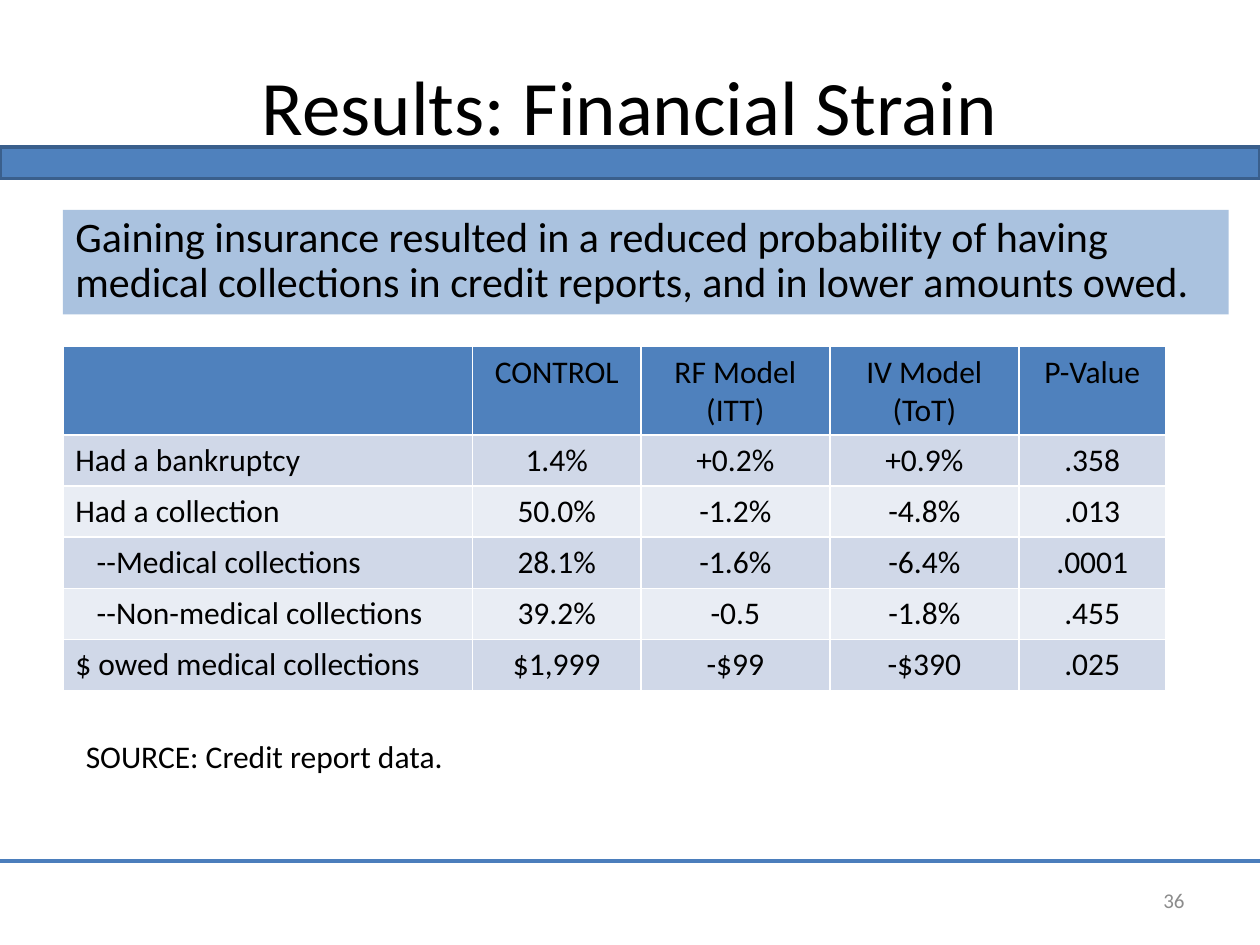
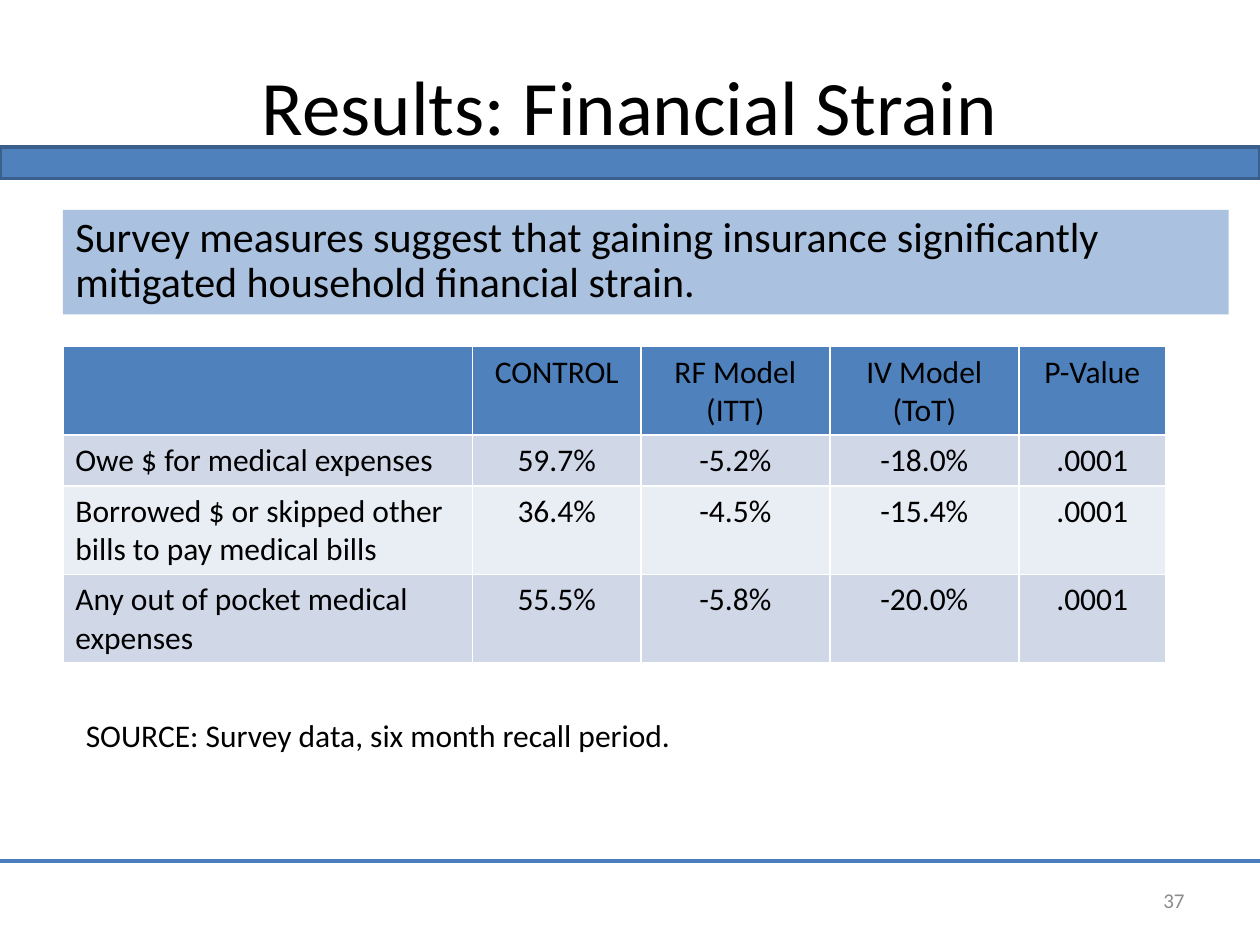
from lxml.etree import SubElement
from pptx import Presentation
from pptx.dml.color import RGBColor
from pptx.enum.shapes import MSO_CONNECTOR, MSO_SHAPE
from pptx.enum.text import MSO_ANCHOR as ANCHOR, PP_ALIGN as ALIGN
from pptx.oxml.ns import qn
from pptx.util import Cm, Pt

BLACK = RGBColor(0x00, 0x00, 0x00)
WHITE = RGBColor(0xFF, 0xFF, 0xFF)
GREY = RGBColor(0x8C, 0x8C, 0x8C)
BLUE = RGBColor(0x4F, 0x81, 0xBD)
BLUE_EDGE = RGBColor(0x3A, 0x5F, 0x8C)
BLUE_RULE = RGBColor(0x4B, 0x7E, 0xBC)
ROW_DARK = RGBColor(0xD0, 0xD8, 0xE8)
ROW_LIGHT = RGBColor(0xE9, 0xED, 0xF4)

WIDTH, HEIGHT = 25.4, 19.05
MARGIN = 1.27
COLUMNS = [8.26, 3.39, 3.81, 3.81, 2.96]
ONE_LINE, TWO_LINES = 1.03, 1.78
CELL_MARGIN, SUB_ITEM_MARGIN = 0.25, 0.68
HEADER = ["", "CONTROL", "RF Model\n(ITT)", "IV Model\n(ToT)", "P-Value"]

SLIDES = [
    dict(
        number=36,
        finding="Gaining insurance resulted in a reduced probability of having "
                "medical collections in credit reports, and in lower amounts owed.",
        rows=[
            ["Had a bankruptcy", "1.4%", "+0.2%", "+0.9%", ".358"],
            ["Had a collection", "50.0%", "-1.2%", "-4.8%", ".013"],
            ["--Medical collections", "28.1%", "-1.6%", "-6.4%", ".0001"],
            ["--Non-medical collections", "39.2%", "-0.5", "-1.8%", ".455"],
            ["$ owed medical collections", "$1,999", "-$99", "-$390", ".025"],
        ],
        heights=[ONE_LINE] * 5,
        source="SOURCE: Credit report data.",
        source_top=14.82,
    ),
    dict(
        number=37,
        finding="Survey measures suggest that gaining insurance significantly "
                "mitigated household financial strain.",
        rows=[
            ["Owe $ for medical expenses", "59.7%", "-5.2%", "-18.0%", ".0001"],
            ["Borrowed $ or skipped other bills to pay medical bills",
             "36.4%", "-4.5%", "-15.4%", ".0001"],
            ["Any out of pocket medical expenses",
             "55.5%", "-5.8%", "-20.0%", ".0001"],
        ],
        heights=[ONE_LINE, TWO_LINES, TWO_LINES],
        source="SOURCE: Survey data, six month recall period.",
        source_top=14.4,
    ),
]


class Deck:
    """Holds the shared style and the current slide, and draws its elements."""

    def __init__(self, font="Calibri"):
        self.font = font
        self.prs = Presentation()
        self.prs.slide_width, self.prs.slide_height = Cm(WIDTH), Cm(HEIGHT)
        self.s = None

    def fill_text(self, tf, text, size, color=BLACK, align=ALIGN.LEFT, spacing=None):
        tf.word_wrap = True
        for i, line in enumerate(text.split("\n")):
            p = tf.add_paragraph() if i else tf.paragraphs[0]
            p.text = line
            p.alignment = align
            if spacing:
                p.line_spacing = spacing
            p.font.name, p.font.size = self.font, Pt(size)
            p.font.color.rgb = color

    def text(self, x, y, w, h, text, size, anchor=ANCHOR.TOP, **style):
        sp = self.s.shapes.add_textbox(Cm(x), Cm(y), Cm(w), Cm(h))
        sp.text_frame.vertical_anchor = anchor
        self.fill_text(sp.text_frame, text, size, **style)

    def box(self, x, y, w, h, fill, edge=None, opacity=None):
        sp = self.s.shapes.add_shape(MSO_SHAPE.RECTANGLE, Cm(x), Cm(y), Cm(w), Cm(h))
        sp.shadow.inherit = False
        sp.fill.solid()
        sp.fill.fore_color.rgb = fill
        if opacity:
            clr = sp._element.spPr.find(qn("a:solidFill"))[0]
            SubElement(clr, qn("a:alpha"), val=str(opacity * 1000))
        if edge:
            sp.line.color.rgb, sp.line.width = edge, Pt(2)
        else:
            sp.line.fill.background()
        return sp

    def rule(self, y):
        sp = self.s.shapes.add_connector(
            MSO_CONNECTOR.STRAIGHT, Cm(0), Cm(y), Cm(WIDTH), Cm(y))
        sp.line.color.rgb, sp.line.width = BLUE_RULE, Pt(2.5)
        SubElement(sp._element.spPr, qn("a:effectLst"))

    def slide(self, title, number):
        self.s = self.prs.slides.add_slide(self.prs.slide_layouts[6])
        self.text(1.9, 1.06, 21.6, 1.95, title, 44, align=ALIGN.CENTER)
        self.box(0, 2.96, WIDTH, 0.64, BLUE, edge=BLUE_EDGE)
        self.rule(17.36)
        self.text(18.2, 17.65, 5.93, 1.01, str(number), 12, anchor=ANCHOR.MIDDLE,
                  color=GREY, align=ALIGN.RIGHT)

    def finding(self, text):
        sp = self.box(MARGIN, 4.23, 23.5, 2.11, BLUE, opacity=48)
        sp.text_frame.vertical_anchor = ANCHOR.TOP
        self.fill_text(sp.text_frame, text, 24, spacing=0.9)

    def cell(self, cell, text, fill, align):
        tcPr = cell._tc.get_or_add_tcPr()
        for side in ("lnL", "lnR", "lnT", "lnB"):
            ln = SubElement(tcPr, qn(f"a:{side}"), w=str(Pt(1)))
            clr = SubElement(ln, qn("a:solidFill"))
            SubElement(clr, qn("a:srgbClr"), val=str(WHITE))
        cell.fill.solid()
        cell.fill.fore_color.rgb = fill
        sub_item = text.startswith("--")
        cell.margin_left = Cm(SUB_ITEM_MARGIN if sub_item else CELL_MARGIN)
        self.fill_text(cell.text_frame, text, 18, align=align)

    def table(self, rows, heights):
        rows, heights = [HEADER] + rows, [TWO_LINES] + heights
        tbl = self.s.shapes.add_table(
            len(rows), len(COLUMNS), Cm(MARGIN), Cm(6.99),
            Cm(sum(COLUMNS)), Cm(sum(heights))).table
        tbl.first_row = tbl.horz_banding = False
        for col, width in zip(tbl.columns, COLUMNS):
            col.width = Cm(width)
        for i, (row, height) in enumerate(zip(rows, heights)):
            tbl.rows[i].height = Cm(height)
            fill = BLUE if i == 0 else ROW_DARK if i % 2 else ROW_LIGHT
            for j, text in enumerate(row):
                align = ALIGN.CENTER if j else ALIGN.LEFT
                self.cell(tbl.cell(i, j), text, fill, align)

    def source(self, text, top):
        self.text(1.48, top, 23.07, 0.94, text, 18, spacing=0.9)


def main():
    deck = Deck()
    for d in SLIDES:
        deck.slide("Results: Financial Strain", d["number"])
        deck.finding(d["finding"])
        deck.table(d["rows"], d["heights"])
        deck.source(d["source"], d["source_top"])
    deck.prs.save("out.pptx")


if __name__ == "__main__":
    main()
